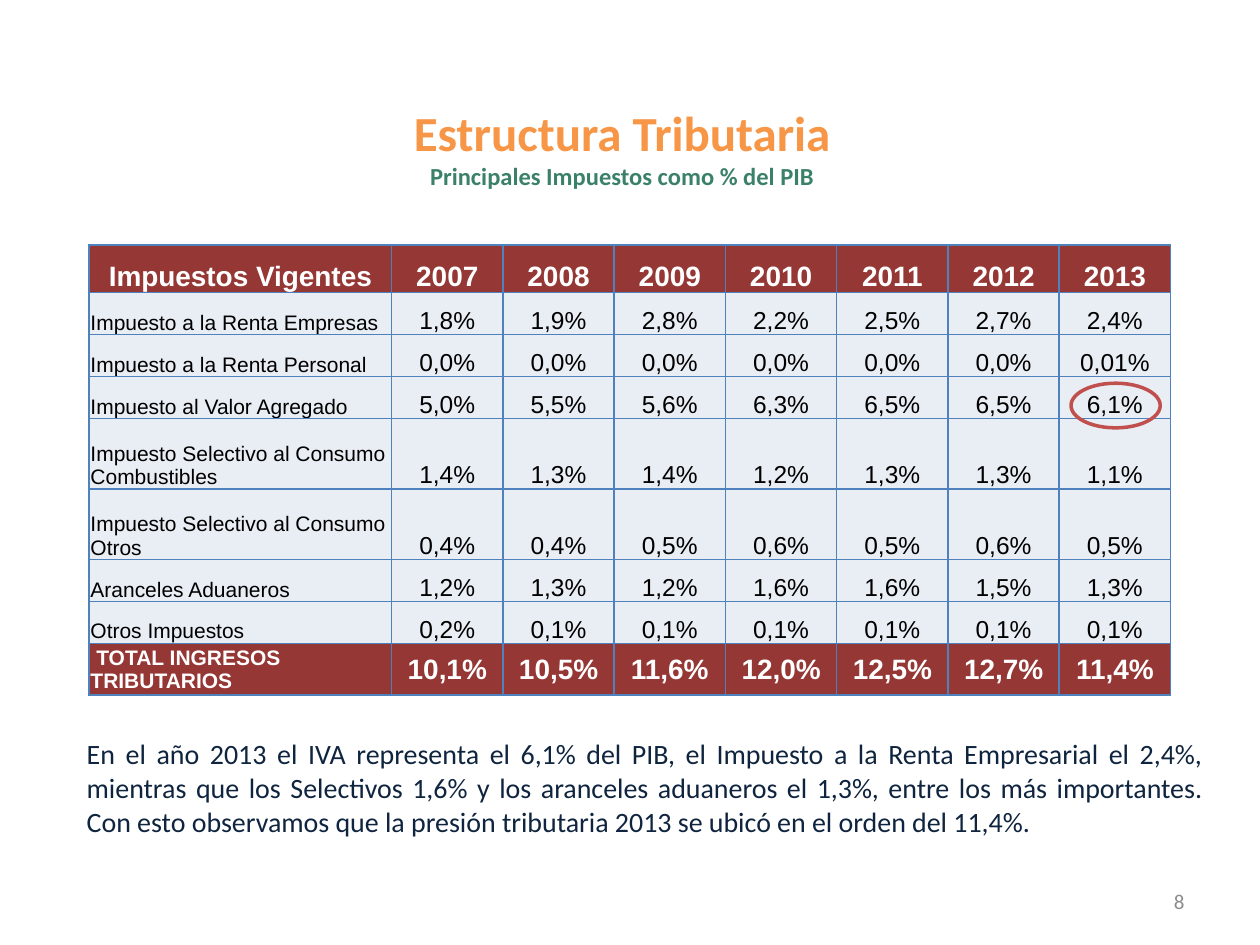
from lxml import etree
from pptx import Presentation, util as u
from pptx.dml.color import RGBColor
from pptx.enum import shapes, text
from pptx.oxml import ns

ORANGE = RGBColor(0xF7, 0x96, 0x46)
GREEN = RGBColor(0x3B, 0x81, 0x6A)
NAVY = RGBColor(0x0F, 0x24, 0x3E)
GREY = RGBColor(0x8C, 0x8C, 0x8C)
MAROON = RGBColor(0x95, 0x37, 0x35)
PALE = RGBColor(0xE9, 0xED, 0xF4)
BLUE = RGBColor(0x4F, 0x81, 0xBD)
RED = RGBColor(0xC0, 0x50, 0x4D)
WHITE = RGBColor(0xFF, 0xFF, 0xFF)
BLACK = RGBColor(0, 0, 0)

HEADER = ["Impuestos Vigentes", *map(str, range(2007, 2014))]
TAXES = [
    ["Impuesto a la Renta Empresas", "1,8%", "1,9%", "2,8%", "2,2%", "2,5%", "2,7%", "2,4%"],
    ["Impuesto a la Renta Personal", *["0,0%"] * 6, "0,01%"],
    ["Impuesto al Valor Agregado", "5,0%", "5,5%", "5,6%", "6,3%", "6,5%", "6,5%", "6,1%"],
    ["Impuesto Selectivo al Consumo Combustibles",
     "1,4%", "1,3%", "1,4%", "1,2%", "1,3%", "1,3%", "1,1%"],
    ["Impuesto Selectivo al Consumo Otros",
     "0,4%", "0,4%", "0,5%", "0,6%", "0,5%", "0,6%", "0,5%"],
    ["Aranceles Aduaneros", "1,2%", "1,3%", "1,2%", "1,6%", "1,6%", "1,5%", "1,3%"],
    ["Otros Impuestos", "0,2%", *["0,1%"] * 6],
]
TOTAL = [" TOTAL INGRESOS TRIBUTARIOS",
         "10,1%", "10,5%", "11,6%", "12,0%", "12,5%", "12,7%", "11,4%"]
COLUMN_WIDTHS = [172.8] + [63.6] * 7
ROW_HEIGHTS = [27.2, 24, 24, 24, 40.3, 40.3, 24, 24, 27.2]
COMMENT = (
    "En el año 2013 el IVA representa el 6,1% del PIB, el Impuesto a la Renta Empresarial "
    "el 2,4%, mientras que los Selectivos 1,6% y los aranceles aduaneros el 1,3%, entre los "
    "más importantes. Con esto observamos que la presión tributaria 2013 se ubicó en el "
    "orden del 11,4%."
)


class SlideBuilder:
    """Adds styled elements to the current slide."""

    text_font = "Calibri"
    table_font = "Arial"

    def __init__(self, slide):
        self.slide = slide

    def add_run(self, paragraph, content, size, color, bold=False, name=None):
        run = paragraph.add_run()
        run.text = content
        run.font.name = name or self.text_font
        run.font.size = u.Pt(size)
        run.font.color.rgb = color
        run.font.bold = bold

    def add_title(self, box, heading, subtitle):
        title = self.slide.shapes.title
        title.left, title.top, title.width, title.height = map(u.Pt, box)
        title.text_frame.vertical_anchor = text.MSO_ANCHOR.MIDDLE
        paragraph = title.text_frame.paragraphs[0]
        paragraph.alignment = text.PP_ALIGN.CENTER
        self.add_run(paragraph, heading, 28, ORANGE, True)
        paragraph.add_line_break()
        self.add_run(paragraph, subtitle, 14, GREEN, True)

    def add_text(self, box, content, size, color, alignment, anchor):
        frame = self.slide.shapes.add_textbox(*map(u.Pt, box)).text_frame
        frame.word_wrap = True
        frame.vertical_anchor = anchor
        frame.paragraphs[0].alignment = alignment
        self.add_run(frame.paragraphs[0], content, size, color)

    def add_borders(self, cell):
        properties = cell._tc.get_or_add_tcPr()
        for index, side in enumerate(("lnL", "lnR", "lnT", "lnB")):
            line = etree.Element(ns.qn(f"a:{side}"), w=str(u.Pt(1)))
            fill = etree.SubElement(line, ns.qn("a:solidFill"))
            etree.SubElement(fill, ns.qn("a:srgbClr"), val=str(BLUE))
            properties.insert(index, line)

    def fill_cell(self, cell, content, size, color, bold, fill, alignment, anchor):
        cell.margin_left = cell.margin_right = cell.margin_top = u.Pt(0.72)
        cell.margin_bottom = 0
        cell.vertical_anchor = anchor
        cell.fill.solid()
        cell.fill.fore_color.rgb = fill
        self.add_borders(cell)
        paragraph = cell.text_frame.paragraphs[0]
        paragraph.alignment = alignment
        self.add_run(paragraph, content, size, color, bold, self.table_font)

    def add_table(self, left, top, rows, widths, heights):
        table = self.slide.shapes.add_table(
            len(rows), len(widths), u.Pt(left), u.Pt(top),
            u.Pt(sum(widths)), u.Pt(sum(heights))).table
        for column, width in zip(table.columns, widths):
            column.width = u.Pt(width)
        last = len(rows) - 1
        for i, values in enumerate(rows):
            table.rows[i].height = u.Pt(heights[i])
            strong = i in (0, last)
            color, fill = (WHITE, MAROON) if strong else (BLACK, PALE)
            anchor = text.MSO_ANCHOR.MIDDLE if i == last else text.MSO_ANCHOR.BOTTOM
            for j, value in enumerate(values):
                label = j == 0 and i > 0
                size = 12 if label else 16 if strong else 14
                alignment = text.PP_ALIGN.LEFT if label else text.PP_ALIGN.CENTER
                self.fill_cell(table.cell(i, j), value, size, color, strong, fill,
                               alignment, anchor)

    def add_ring(self, box):
        ring = self.slide.shapes.add_shape(shapes.MSO_SHAPE.OVAL, *map(u.Pt, box))
        ring.shadow.inherit = False
        ring.fill.background()
        ring.line.color.rgb = RED
        ring.line.width = u.Pt(2)


def main():
    presentation = Presentation()
    presentation.slide_width, presentation.slide_height = u.Pt(720), u.Pt(540)
    builder = SlideBuilder(presentation.slides.add_slide(presentation.slide_layouts[5]))
    builder.add_text((516, 500.5, 168, 28.75), "8", 12, GREY,
                     text.PP_ALIGN.RIGHT, text.MSO_ANCHOR.MIDDLE)
    builder.add_title((0, 56, 711, 55.5), "Estructura Tributaria",
                      "Principales Impuestos como % del PIB")
    builder.add_text((42.5, 417.6, 652.3, 65.5), COMMENT, 16, NAVY,
                     text.PP_ALIGN.JUSTIFY, text.MSO_ANCHOR.TOP)
    builder.add_table(51, 140, [HEADER, *TAXES, TOTAL], COLUMN_WIDTHS, ROW_HEIGHTS)
    builder.add_ring((612, 219, 51, 25.5))
    presentation.save("out.pptx")


if __name__ == "__main__":
    main()
